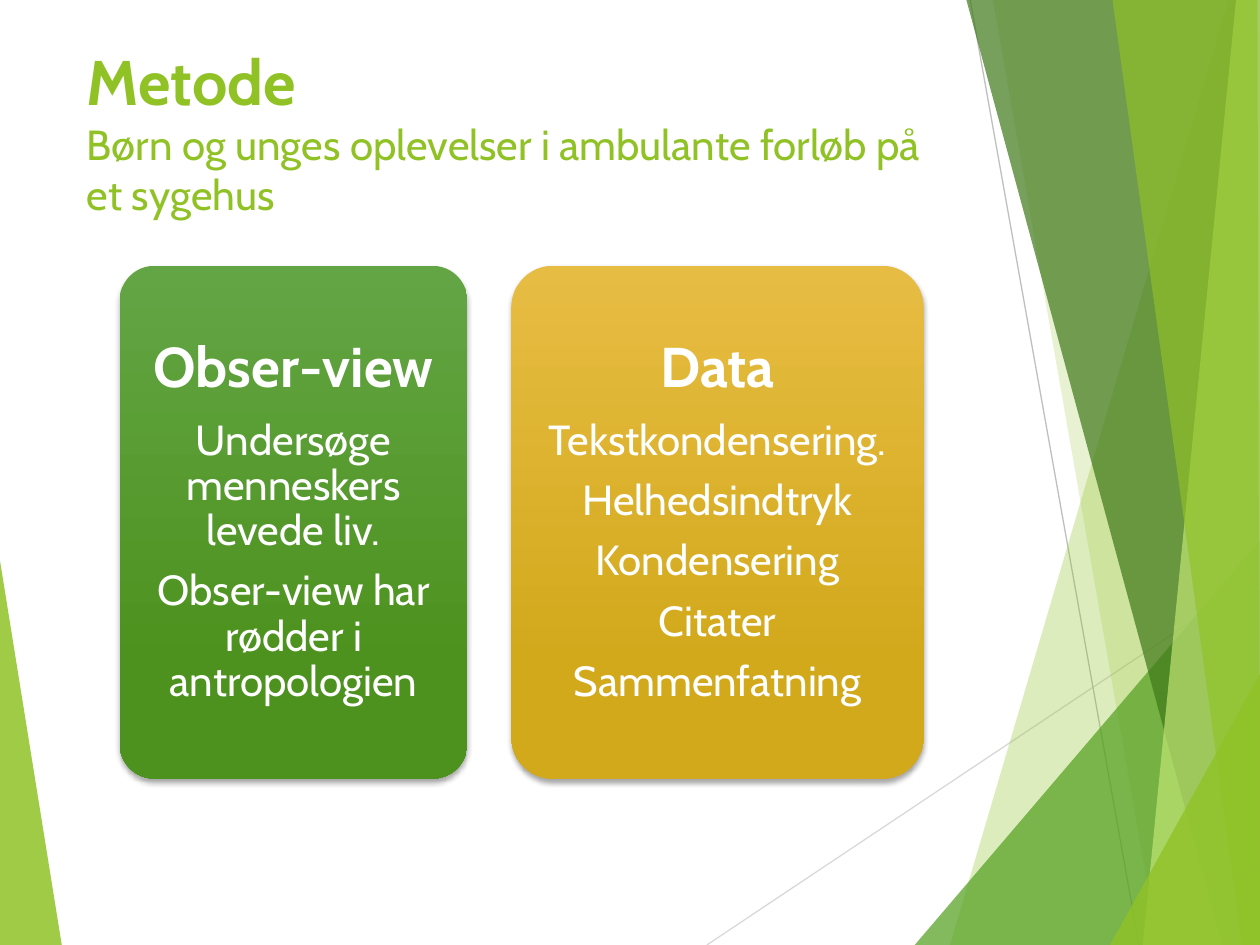
import pptx
import pptx.util
import pptx.dml.color
import pptx.enum.shapes
import pptx.enum.text
import pptx.oxml
import pptx.oxml.ns
import lxml.etree
from pptx.util import Inches

RGB = pptx.dml.color.RGBColor
LIME = RGB(0x90, 0xC2, 0x26)
GREEN = RGB(0x54, 0xA0, 0x21)
DARK_GREEN = RGB(0x3F, 0x78, 0x19)
PALE_LIME = RGB(0xC0, 0xE4, 0x74)
LIGHT_GREY = RGB(0xD9, 0xD9, 0xD9)
GREY = RGB(0xBF, 0xBF, 0xBF)
WHITE = RGB(0xFF, 0xFF, 0xFF)
BLACK = RGB(0, 0, 0)
GREEN_CARD = (RGB(0x63, 0xA5, 0x45), RGB(0x4D, 0x92, 0x1E))
GOLD_CARD = (RGB(0xE7, 0xBC, 0x43), RGB(0xD2, 0xA9, 0x1B))

FONT = "Cabin"
WIDTH, HEIGHT = 10, 7.5
CARD_TOP, CARD_HEIGHT = 2.11, 4.07

# Facets: corner points, colour, opacity in percent
LEFT_FACET = ([(0, 4.45), (0.49, HEIGHT), (0, HEIGHT)], LIME, 85)
RIGHT_FACETS = [
    ([(9.75, 0), (7.54, HEIGHT), (WIDTH, HEIGHT), (WIDTH, 0)], LIME, 30),
    ([(7.88, 0), (9.19, HEIGHT), (WIDTH, HEIGHT), (WIDTH, 0)], LIME, 20),
    ([(7.26, HEIGHT), (WIDTH, 4.29), (WIDTH, HEIGHT)], GREEN, 72),
    ([(7.67, 0), (9.7, HEIGHT), (WIDTH, HEIGHT), (WIDTH, 0)], DARK_GREEN, 70),
    ([(9.81, 0), (9.07, HEIGHT), (WIDTH, HEIGHT), (WIDTH, 0)], PALE_LIME, 70),
    ([(8.83, 0), (9.86, HEIGHT), (WIDTH, HEIGHT), (9.98, 0)], LIME, 65),
    ([(8.81, HEIGHT), (WIDTH, 5.35), (WIDTH, HEIGHT)], LIME, 80),
]

# Cards: left, width, gradient colours, heading, body paragraphs
CARDS = [
    (0.95, 2.76, GREEN_CARD, "Obser-view",
     ["Undersøge menneskers levede liv.",
      "Obser-view har rødder i antropologien"]),
    (4.06, 3.27, GOLD_CARD, "Data",
     ["Tekstkondensering.", "Helhedsindtryk", "Kondensering",
      "Citater", "Sammenfatning"]),
]


def sub(parent, tag, **attrs):
    return lxml.etree.SubElement(
        parent, pptx.oxml.ns.qn(tag), {k: str(v) for k, v in attrs.items()})


def add_facet(slide, points, color, opacity):
    corners = [(Inches(x), Inches(y)) for x, y in points]
    builder = slide.shapes.build_freeform(*corners[0])
    builder.add_line_segments(corners[1:], close=True)
    s = builder.convert_to_shape()
    s.shadow.inherit = False
    s.line.fill.background()
    s.fill.solid()
    s.fill.fore_color.rgb = color
    clr = s._element.spPr.find(".//" + pptx.oxml.ns.qn("a:srgbClr"))
    sub(clr, "a:alpha", val=opacity * 1000)


def add_line(slide, x1, y1, x2, y2, color):
    s = slide.shapes.add_connector(
        pptx.enum.shapes.MSO_CONNECTOR.STRAIGHT,
        Inches(x1), Inches(y1), Inches(x2), Inches(y2))
    s.line.color.rgb = color
    s.line.width = pptx.util.Pt(0.75)
    sub(s._element.spPr, "a:effectLst")


def add_textbox(slide, left, top, width, height):
    box = slide.shapes.add_textbox(
        Inches(left), Inches(top), Inches(width), Inches(height))
    tf = box.text_frame
    tf.word_wrap = True
    return tf


def style_font(font, size, color, bold=False):
    font.name = FONT
    font.size = pptx.util.Pt(size)
    font.bold = bold
    font.color.rgb = color


def add_title(slide, heading, subtitle):
    tf = add_textbox(slide, 0.59, 0.29, 6.94, 1.82)
    p = tf.paragraphs[0]
    r = p.add_run()
    r.text = heading
    style_font(r.font, 36, LIME, bold=True)
    p.add_line_break()
    r = p.add_run()
    r.text = subtitle
    style_font(r.font, 24, LIME)


def add_card_shape(slide, left, width, colors):
    s = slide.shapes.add_shape(
        pptx.enum.shapes.MSO_SHAPE.ROUNDED_RECTANGLE,
        Inches(left), Inches(CARD_TOP), Inches(width), Inches(CARD_HEIGHT))
    s.adjustments[0] = 0.1
    s.line.fill.background()
    s.fill.gradient()
    s.fill.gradient_angle = 270
    for stop, color, position in zip(s.fill.gradient_stops, colors, (0, 0.78)):
        stop.color.rgb = color
        stop.position = position

    # Soft shadow below the card
    s.shadow.inherit = False
    effects = s._element.spPr.find(pptx.oxml.ns.qn("a:effectLst"))
    shadow = sub(effects, "a:outerShdw", blurRad=pptx.util.Pt(3),
                 dist=pptx.util.Pt(2), dir=90 * 60000, rotWithShape=0)
    clr = sub(shadow, "a:srgbClr", val=BLACK)
    sub(clr, "a:alpha", val=35000)


def add_card_text(slide, left, width, heading, body):
    inset = 0.09
    tf = add_textbox(slide, left + inset, CARD_TOP + inset,
                     width - 2 * inset, CARD_HEIGHT - 2 * inset)
    tf.vertical_anchor = pptx.enum.text.MSO_ANCHOR.MIDDLE
    tf.margin_left = tf.margin_right = Inches(0.07)
    tf.margin_top = tf.margin_bottom = Inches(0.04)
    for i, text in enumerate([heading] + body):
        p = tf.add_paragraph() if i else tf.paragraphs[0]
        size = 24 if i else 32
        p.text = text
        p.alignment = pptx.enum.text.PP_ALIGN.CENTER
        p.line_spacing = 0.9
        p.space_after = pptx.util.Pt(0.35 * size)
        style_font(p.font, size, WHITE, bold=i == 0)


def main():
    prs = pptx.Presentation()
    prs.slide_width, prs.slide_height = Inches(WIDTH), Inches(HEIGHT)
    slide = prs.slides.add_slide(prs.slide_layouts[6])

    # Background decoration
    add_facet(slide, *LEFT_FACET)
    add_line(slide, 5.61, HEIGHT, WIDTH, 4.57, LIGHT_GREY)
    add_line(slide, 7.7, 0, 9.04, HEIGHT, GREY)
    for facet in RIGHT_FACETS:
        add_facet(slide, *facet)

    # Title and cards
    add_title(slide, "Metode",
              "Børn og unges oplevelser i ambulante forløb på et sygehus")
    for left, width, colors, heading, body in CARDS:
        add_card_shape(slide, left, width, colors)
        add_card_text(slide, left, width, heading, body)

    prs.save("out.pptx")


if __name__ == "__main__":
    main()
